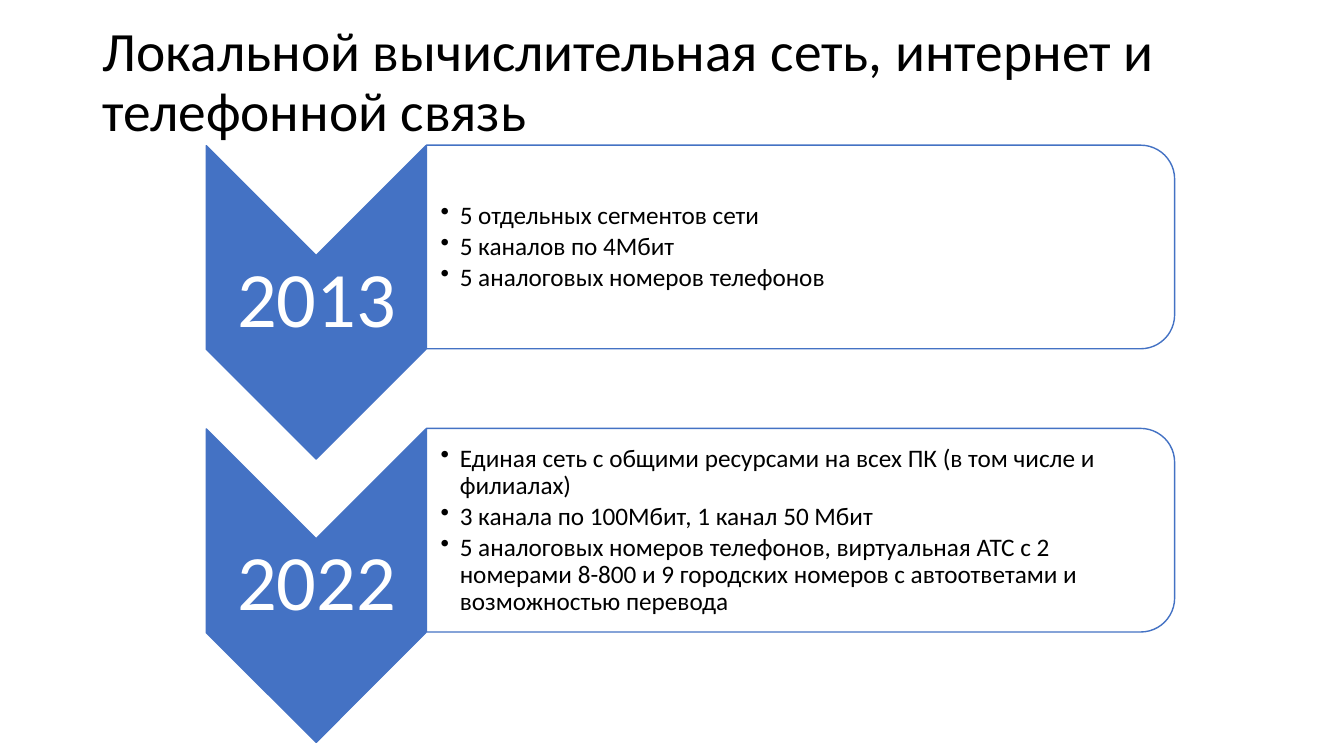
from lxml import etree
from pptx import Presentation
from pptx.dml.color import RGBColor
from pptx.enum.shapes import MSO_SHAPE
from pptx.enum.text import MSO_ANCHOR, PP_ALIGN
from pptx.oxml.ns import qn
from pptx.util import Inches, Pt

CHEVRON = MSO_SHAPE.CHEVRON
ROUNDED_PANEL = MSO_SHAPE.ROUND_2_SAME_RECTANGLE
MIDDLE = MSO_ANCHOR.MIDDLE
LEFT, CENTER = PP_ALIGN.LEFT, PP_ALIGN.CENTER

COLORS = {"blue": "4472C4", "white": "FFFFFF", "black": "000000"}
ROW_STEP = 2.81
STAGES = [
    ("2013", [
        "5 отдельных сегментов сети",
        "5 каналов по 4Мбит",
        "5 аналоговых номеров телефонов",
    ]),
    ("2022", [
        "Единая сеть с общими ресурсами на всех ПК (в том числе и филиалах)",
        "3 канала по 100Мбит, 1 канал 50 Мбит",
        "5 аналоговых номеров телефонов, виртуальная АТС с 2 номерами 8-800 "
        "и 9 городских номеров с автоответами и возможностью перевода",
    ]),
]

prs = Presentation()
prs.slide_width, prs.slide_height = Inches(13.33), Inches(7.5)
slide = prs.slides.add_slide(prs.slide_layouts[6])


def add_turned_shape(preset, box, fill):
    """Preset shape turned a quarter clockwise, outlined in blue."""
    shape = slide.shapes.add_shape(preset, *map(Inches, box))
    shape.rotation = 90
    shape.shadow.inherit = False
    shape.fill.solid()
    shape.fill.fore_color.rgb = RGBColor.from_string(COLORS[fill])
    shape.line.color.rgb = RGBColor.from_string(COLORS["blue"])
    shape.line.width = Pt(1)
    return shape


def add_text(box, insets, lines, size, color, align=LEFT, space_after=0):
    """Middle-anchored text box; insets are left, top, right, bottom."""
    frame = slide.shapes.add_textbox(*map(Inches, box)).text_frame
    frame.word_wrap = True
    frame.vertical_anchor = MIDDLE
    (frame.margin_left, frame.margin_top,
     frame.margin_right, frame.margin_bottom) = map(Inches, insets)
    frame.text = "\n".join(lines)
    for paragraph in frame.paragraphs:
        paragraph.alignment = align
        paragraph.line_spacing = 0.9
        paragraph.space_after = Pt(space_after)
        paragraph.font.name = "Calibri"
        paragraph.font.size = Pt(size)
        paragraph.font.color.rgb = RGBColor.from_string(COLORS[color])
    return frame


# Title, raised by a deeper bottom inset
add_text((0.92, 0.4, 11.5, 1.45), (0.1, 0.05, 0.1, 0.64),
         ["Локальной вычислительная сеть, интернет и телефонной связь"],
         39.6, "black")

# One row per year: chevron with the year, panel with its facts
for row, (year, facts) in enumerate(STAGES):
    shift = row * ROW_STEP
    add_turned_shape(CHEVRON, (1.58, 1.91 + shift, 3.11, 2.18), "blue")
    add_text((2.05, 2.53 + shift, 2.18, 0.93), (0.04,) * 4,
             [year], 56, "white", CENTER)

    add_turned_shape(ROUNDED_PANEL, (6.93, -1.26 + shift, 2.02, 7.42), "white")
    fact_list = add_text((4.23, 1.54 + shift, 7.32, 1.83),
                         (0.14, 0.01, 0.01, 0.01), facts, 18, "black",
                         space_after=2.7)
    for fact in fact_list.paragraphs:
        fact.level = 1
        properties = fact._p.get_or_add_pPr()
        properties.set("marL", str(Inches(0.19)))
        properties.set("indent", str(-Inches(0.19)))
        bullet = etree.Element(qn("a:buChar"), char="•")
        properties.find(qn("a:spcAft")).addnext(bullet)

prs.save("out.pptx")
